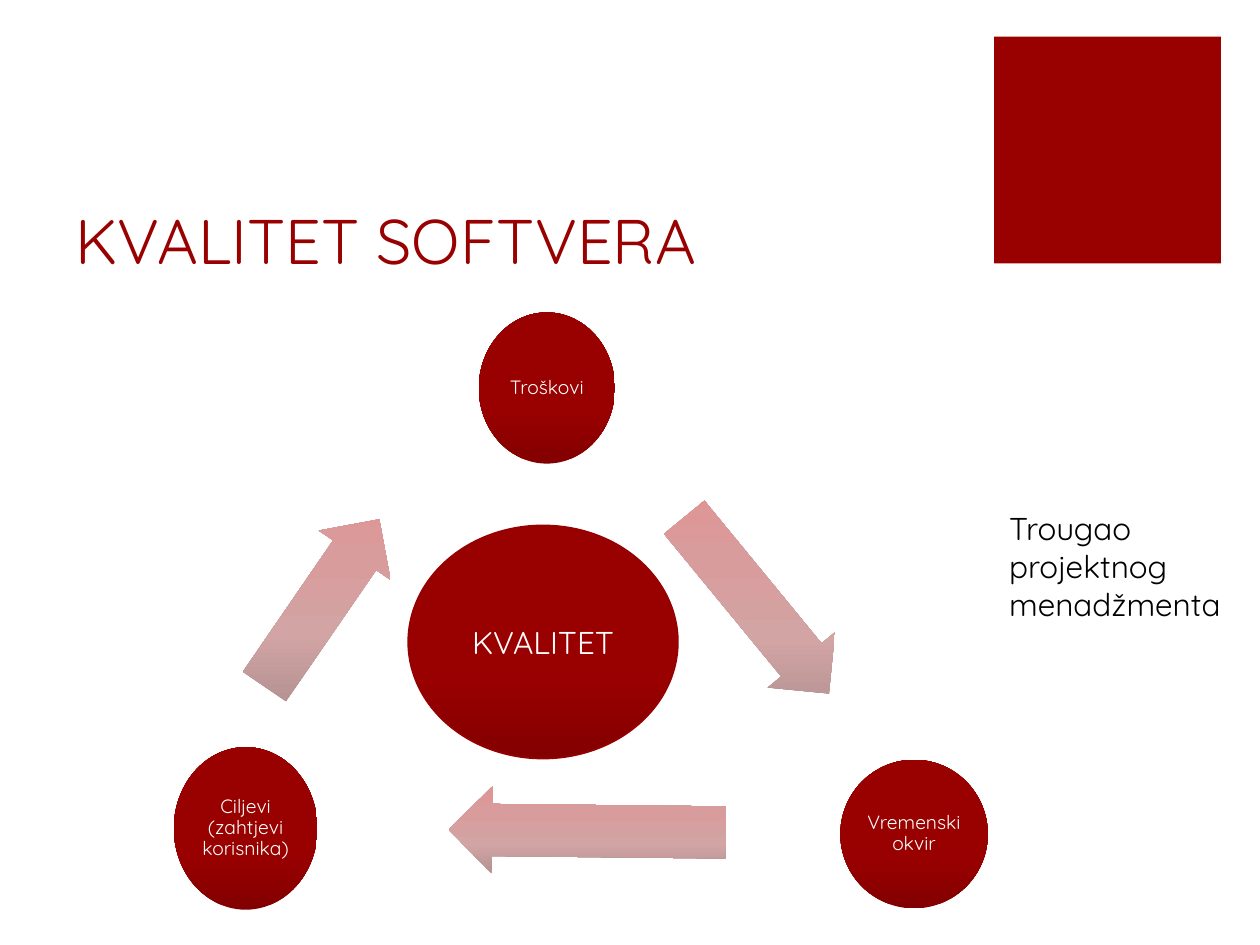
from typing import NamedTuple

from lxml.etree import SubElement
from pptx import Presentation
from pptx.dml.color import RGBColor
from pptx.enum.shapes import MSO_SHAPE as Shape
from pptx.enum.text import MSO_ANCHOR as Anchor, PP_ALIGN as Align
from pptx.oxml.ns import qn
from pptx.util import Pt

EMU_PER_PX = 9144  # 100 px to the inch
FONT = "Quicksand"
RED = RGBColor(0x99, 0x00, 0x00)
DARK_RED = RGBColor(0x83, 0x00, 0x00)
EDGE_RED = RGBColor(0x96, 0x00, 0x00)
WHITE = RGBColor(0xFF, 0xFF, 0xFF)
BLACK = RGBColor(0x00, 0x00, 0x00)
ARROW_COLORS = [RGBColor(0xB0, 0x90, 0x90), RGBColor(0xD2, 0xA4, 0xA4),
                RGBColor(0xD9, 0x9C, 0x9C), RGBColor(0xE1, 0x94, 0x94)]
CIRCLE_COLORS = [DARK_RED, RED, RED, RED]
STOPS = [0, 35, 70, 100]


class Box(NamedTuple):
    left: int
    top: int
    width: int
    height: int


class Circle(NamedTuple):
    text: str
    box: Box


class Arrow(NamedTuple):
    box: Box
    rotation: float


CIRCLES = [
    Circle("Troškovi", Box(380, 248, 108, 120)),
    Circle("Vremenski okvir", Box(667, 603, 117, 118)),
    Circle("Ciljevi (zahtjevi korisnika)", Box(138, 593, 114, 129)),
]
ARROWS = [
    Arrow(Box(510, 446, 181, 69), 50.6),
    Arrow(Box(356, 625, 220, 69), 180.6),
    Arrow(Box(175, 444, 161, 69), 304.5),
]
CENTRE = Circle("KVALITET", Box(324, 417, 214, 185))


def px(value: int) -> int:
    return value * EMU_PER_PX


def emu(box: Box) -> list[int]:
    return [px(v) for v in box]


def add_shape(slide, kind, box: Box):
    sp = slide.shapes.add_shape(kind, *emu(box))
    sp.shadow.inherit = False
    sp.line.fill.background()
    return sp


def fill_upwards(sp, colors: list[RGBColor]) -> None:
    """Fill from bottom to top, staying upright when the shape is rotated."""
    sp.fill.gradient()
    grad = sp._element.spPr.find(qn("a:gradFill"))
    grad.set("rotWithShape", "0")
    stops = grad.find(qn("a:gsLst"))
    for old in list(stops):
        stops.remove(old)
    for position, color in zip(STOPS, colors):
        stop = SubElement(stops, qn("a:gs"), pos=str(position * 1000))
        SubElement(stop, qn("a:srgbClr"), val=str(color))
    sp.fill.gradient_angle = 90


def write(tf, text: str, size: int, color: RGBColor, align=Align.LEFT, **frame) -> None:
    for name, value in {"word_wrap": True, **frame}.items():
        setattr(tf, name, value)
    p = tf.paragraphs[0]
    p.alignment = align
    r = p.add_run()
    r.text = text
    for name, value in {"name": FONT, "size": Pt(size)}.items():
        setattr(r.font, name, value)
    r.font.color.rgb = color


def add_circle(slide, circle: Circle, size: int, **frame):
    sp = add_shape(slide, Shape.OVAL, circle.box)
    fill_upwards(sp, CIRCLE_COLORS)
    write(sp.text_frame, circle.text, size, WHITE, Align.CENTER,
          vertical_anchor=Anchor.MIDDLE, **frame)
    return sp


def add_arrow(slide, arrow: Arrow) -> None:
    sp = add_shape(slide, Shape.RIGHT_ARROW, arrow.box)
    sp.adjustments[0], sp.adjustments[1] = 0.6, 0.5
    sp.rotation = arrow.rotation
    fill_upwards(sp, ARROW_COLORS)


def main() -> None:
    prs = Presentation()
    prs.slide_width, prs.slide_height = px(1000), px(750)
    slide = prs.slides.add_slide(prs.slide_layouts[5])

    title = slide.shapes.title
    title.left, title.top, title.width, title.height = emu(Box(50, 100, 712, 125))
    write(title.text_frame, "KVALITET SOFTVERA", 36, RED, vertical_anchor=Anchor.BOTTOM)

    square = add_shape(slide, Shape.RECTANGLE, Box(789, 29, 180, 180))
    square.fill.solid()
    square.fill.fore_color.rgb = RED

    margins = {f"margin_{side}": px(2) for side in ("left", "top", "right", "bottom")}
    for circle, arrow in zip(CIRCLES, ARROWS):
        sp = add_circle(slide, circle, 11, **margins)
        sp.text_frame.paragraphs[0].line_spacing = 0.9
        add_arrow(slide, arrow)

    centre = add_circle(slide, CENTRE, 18)
    centre.line.color.rgb = EDGE_RED
    centre.line.width = Pt(1)

    caption = slide.shapes.add_textbox(*emu(Box(791, 399, 209, 101)))
    write(caption.text_frame, "Trougao projektnog menadžmenta", 18, BLACK)

    prs.save("out.pptx")


if __name__ == "__main__":
    main()
